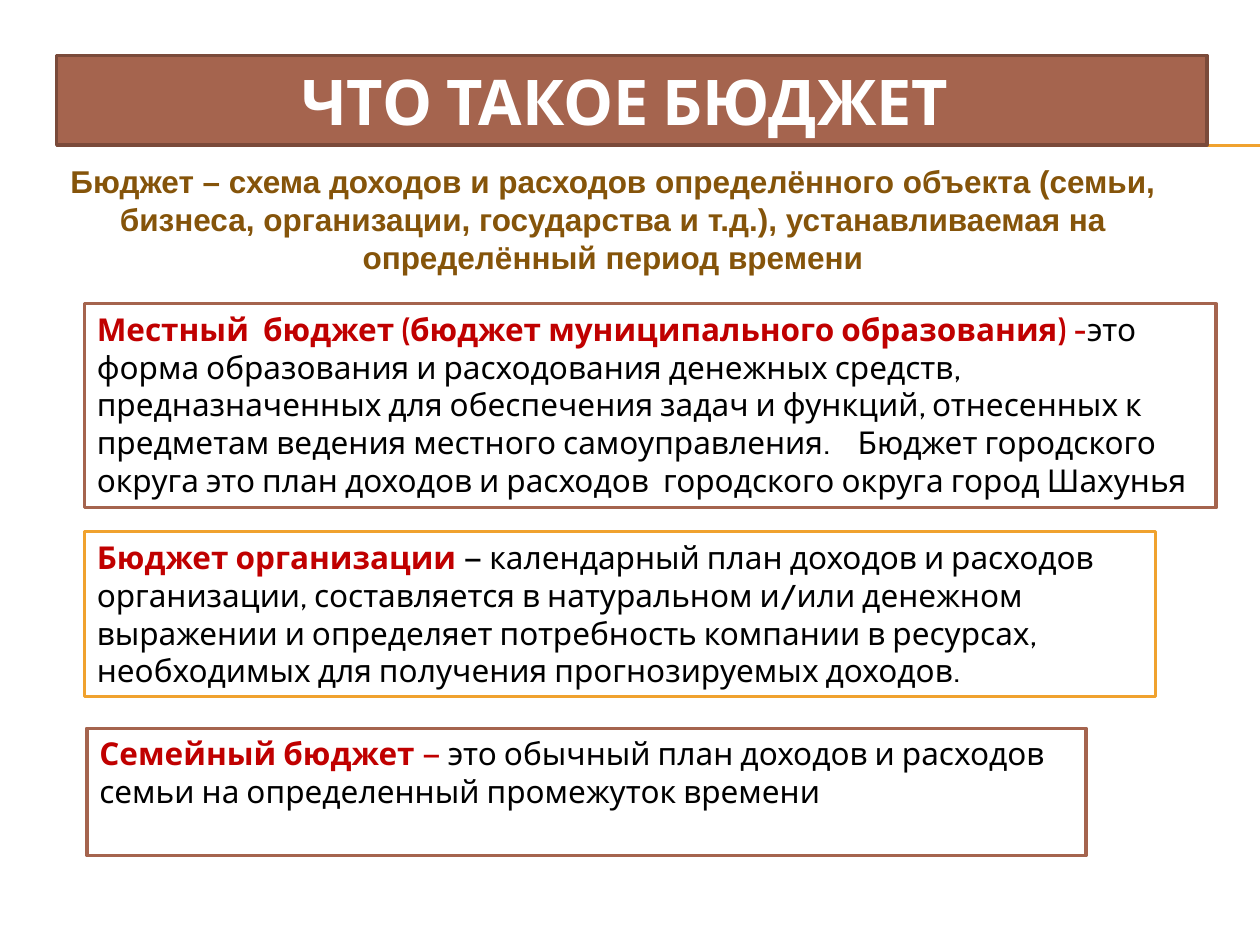
from lxml import etree
from pptx import Presentation
from pptx.dml.color import RGBColor
from pptx.enum.shapes import MSO_CONNECTOR, MSO_SHAPE
from pptx.enum.text import MSO_ANCHOR, MSO_AUTO_SIZE, PP_ALIGN
from pptx.oxml.ns import qn
from pptx.util import Inches, Pt

CENTER, LEFT = PP_ALIGN.CENTER, PP_ALIGN.LEFT
TOP, MIDDLE = MSO_ANCHOR.TOP, MSO_ANCHOR.MIDDLE

WHITE = RGBColor(0xFF, 0xFF, 0xFF)
BLACK = RGBColor(0, 0, 0)
RED = RGBColor(0xC0, 0, 0)
BROWN = RGBColor(0xA5, 0x64, 0x4E)
DARK_BROWN = RGBColor(0x7A, 0x4A, 0x3A)
AMBER = RGBColor(0xF0, 0xA2, 0x2E)
OCHRE = RGBColor(0x85, 0x54, 0x0A)

# Content: runs are (text, colour, bold)
TITLE = [("ЧТО ТАКОЕ БЮДЖЕТ ", WHITE, True)]
DEFINITION = [(
    "Бюджет – схема доходов и расходов определённого объекта (семьи, бизнеса, "
    "организации, государства и т.д.), устанавливаемая на определённый период времени",
    OCHRE, True)]
BUDGETS = [  # (left, top, width, height), border, runs
    ((0.67, 2.41, 8.98, 1.62), BROWN, [
        ("Местный  бюджет (бюджет муниципального образования) -", RED, True),
        ("это форма образования и расходования денежных средств, предназначенных "
         "для обеспечения задач и функций, отнесенных к предметам ведения местного "
         "самоуправления.    Бюджет городского округа это план доходов и расходов  "
         "городского округа город Шахунья", BLACK, False)]),
    ((0.67, 4.22, 8.5, 1.31), AMBER, [
        ("Бюджет организации ", RED, True),
        ("— календарный план доходов и расходов организации, составляется в "
         "натуральном и/или денежном выражении и определяет потребность компании "
         "в ресурсах, необходимых для получения прогнозируемых доходов.", BLACK, False)]),
    ((0.69, 5.78, 7.93, 1.01), BROWN, [
        ("Семейный бюджет ", RED, True),
        ("— ", RED, False),
        ("это обычный план доходов и расходов\vсемьи на определенный промежуток времени",
         BLACK, False)]),
]
RULE_TOPS = (1.15, 1.16)


def write(sp, runs, size=18, font="Cabin", align=LEFT, anchor=TOP):
    tf = sp.text_frame
    tf.word_wrap = True
    tf.auto_size = MSO_AUTO_SIZE.NONE
    tf.vertical_anchor = anchor
    p = tf.paragraphs[0]
    p.alignment = align
    for text, color, bold in runs:
        for i, part in enumerate(text.split("\v")):
            if i:
                p.add_line_break()
            r = p.add_run()
            r.text = part
            r.font.name, r.font.size, r.font.bold = font, Pt(size), bold
            r.font.color.rgb = color


def paint(sp, fill, border):
    sp.fill.solid()
    sp.fill.fore_color.rgb = fill
    sp.line.color.rgb = border
    sp.line.width = Pt(2)


prs = Presentation()
prs.slide_width, prs.slide_height = Inches(10), Inches(7.5)
s = prs.slides.add_slide(prs.slide_layouts[5])
title = s.shapes.title

# Double rule under the heading
for y in RULE_TOPS:
    rule = s.shapes.add_connector(MSO_CONNECTOR.STRAIGHT, Inches(0.56), Inches(y),
                                  Inches(10), Inches(y))
    rule.line.color.rgb = AMBER
    rule.line.width = Pt(0.75)
    etree.SubElement(rule._element.spPr, qn("a:effectLst"))

# General definition
box = s.shapes.add_textbox(*map(Inches, (0.26, 1.24, 9.21, 1.01)))
write(box, DEFINITION, font="Arial", align=CENTER)

# Kinds of budget
for place, border, runs in BUDGETS:
    sp = s.shapes.add_shape(MSO_SHAPE.RECTANGLE, *map(Inches, place))
    sp.shadow.inherit = False
    paint(sp, WHITE, border)
    write(sp, runs)

# Heading, brought in front of the rule
title.left, title.top, title.width, title.height = map(Inches, (0.45, 0.44, 9.13, 0.71))
paint(title, BROWN, DARK_BROWN)
write(title, TITLE, size=36, align=CENTER, anchor=MIDDLE)
title._element.getparent().append(title._element)

prs.save("out.pptx")
